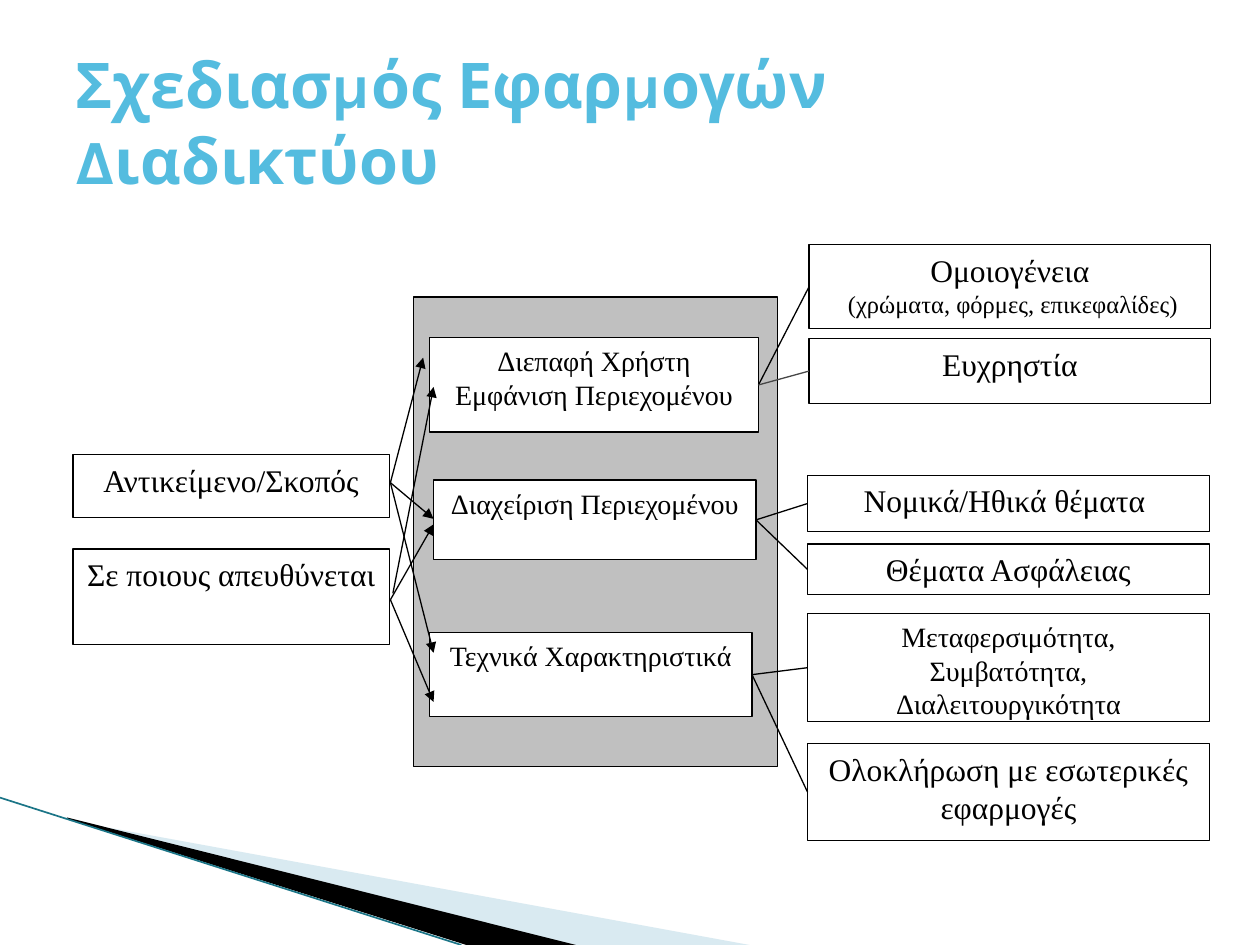
"""Builds a slide on designing web applications, with topics joined to their aspects."""
from typing import NamedTuple

from lxml import etree
from pptx import Presentation
from pptx import util as u
from pptx.dml.color import RGBColor
from pptx.enum import shapes, text
from pptx.oxml.ns import qn


class Theme(NamedTuple):
    font: str = "Times New Roman"
    head: str = "Karla"
    title: str = "54BCDF"
    ink: str = "000000"
    paper: str = "FFFFFF"
    panel: str = "C0C0C0"
    soft: str = "464646"
    wedge: str = "A0CBDC"
    edge: str = "1B7587"
    huge: int = 36
    big: int = 18
    mid: int = 16
    small: int = 14
    line: float = 0.75


class Run(NamedTuple):
    text: str
    size: int


class Box(NamedTuple):
    left: float
    top: float
    width: float
    height: float
    runs: tuple[Run, ...] = ()
    fill: str = "FFFFFF"

    @property
    def start(self) -> tuple[float, float]:
        return self.left, self.top + self.height / 2

    @property
    def end(self) -> tuple[float, float]:
        return self.left + self.width, self.top + self.height / 2


class Link(NamedTuple):
    start: tuple[float, float]
    end: tuple[float, float]
    color: str = "000000"
    arrow: bool = False


T = Theme()
LEFT, SIDE = 1.47, 6.38
RIGHT, WIDE = 16.28, 8.1

PANEL = Box(8.33, 5.99, 7.34, 9.47, fill=T.panel)
GOAL = Box(LEFT, 9.17, SIDE, 1.27, (Run("Αντικείμενο/Σκοπός", T.big),))
USERS = Box(LEFT, 11.07, SIDE, 1.93, (Run("Σε ποιους απευθύνεται", T.big),))
VIEW = Box(8.66, 6.81, 6.63, 1.9, (Run("Διεπαφή Χρήστη", T.mid), Run("Εμφάνιση Περιεχομένου", T.mid)))
DATA = Box(8.74, 9.68, 6.5, 1.6, (Run("Διαχείριση Περιεχομένου", T.mid),))
TECH = Box(8.66, 12.75, 6.5, 1.7, (Run("Τεχνικά Χαρακτηριστικά", T.mid),))
STYLE = Box(16.31, 4.93, WIDE, 1.7,
            (Run("Ομοιογένεια", T.big), Run(" (χρώματα, φόρμες, επικεφαλίδες)", T.small)))
EASE = Box(16.31, 6.83, WIDE, 1.3, (Run("Ευχρηστία", T.big),))
LEGAL = Box(RIGHT, 9.58, WIDE, 1.14, (Run("Νομικά/Ηθικά θέματα ", T.big),))
SAFE = Box(RIGHT, 10.97, WIDE, 1.02, (Run("Θέματα Ασφάλειας", T.big),))
PORT = Box(RIGHT, 12.37, WIDE, 2.18, (Run("Μεταφερσιμότητα, Συμβατότητα, Διαλειτουργικότητα", T.mid),))
JOIN = Box(RIGHT, 14.99, WIDE, 1.96, (Run("Ολοκλήρωση με εσωτερικές εφαρμογές", T.big),))

BOXES = (PANEL, GOAL, USERS, VIEW, DATA, TECH, STYLE, EASE, LEGAL, SAFE, PORT, JOIN)
ARROWS = {
    (7.87, 9.73): ((8.53, 7.21), (8.74, 10.46), (8.74, 13.16)),
    (7.87, 12.09): ((8.74, 10.57), (8.74, 14.15)),
    (7.92, 11.96): ((8.74, 7.8),),
}
TREE = ((VIEW, STYLE), (VIEW, EASE), (DATA, LEGAL), (DATA, SAFE), (TECH, PORT), (TECH, JOIN))


def tint(name: str) -> RGBColor:
    return RGBColor.from_string(name)


def add_run(para, run: Run, font: str, color: str, bold: bool = False) -> None:
    part = para.add_run()
    part.text = run.text
    part.font.name = font
    part.font.size = u.Pt(run.size)
    part.font.bold = bold
    part.font.color.rgb = tint(color)


def add_box(slide, box: Box) -> None:
    shape = slide.shapes.add_shape(shapes.MSO_SHAPE.RECTANGLE, *map(u.Cm, box[:4]))
    shape.shadow.inherit = False
    shape.fill.solid()
    shape.fill.fore_color.rgb = tint(box.fill)
    shape.line.color.rgb = tint(T.ink)
    shape.line.width = u.Pt(T.line)
    frame = shape.text_frame
    frame.word_wrap = True
    frame.vertical_anchor = text.MSO_ANCHOR.TOP
    for i, run in enumerate(box.runs):
        para = frame.add_paragraph() if i else frame.paragraphs[0]
        para.alignment = text.PP_ALIGN.CENTER
        add_run(para, run, T.font, T.ink)


def add_link(slide, link: Link, width: float = T.line) -> None:
    line = slide.shapes.add_connector(
        shapes.MSO_CONNECTOR.STRAIGHT, *map(u.Cm, link.start + link.end))
    line.line.color.rgb = tint(link.color)
    line.line.width = u.Pt(width)
    if link.arrow:
        etree.SubElement(line.line._get_or_add_ln(), qn("a:tailEnd"), type="triangle")
    etree.SubElement(line._element.spPr, qn("a:effectLst"))


def add_wedge(slide, points: tuple, color: str, alpha: int = 100) -> None:
    dots = [(u.Cm(x), u.Cm(y)) for x, y in points]
    form = slide.shapes.build_freeform(*dots[0])
    form.add_line_segments(dots[1:])
    shape = form.convert_to_shape()
    shape.shadow.inherit = False
    shape.line.fill.background()
    shape.fill.solid()
    shape.fill.fore_color.rgb = tint(color)
    if alpha < 100:
        node = shape._element.spPr.find(qn("a:solidFill"))[0]
        etree.SubElement(node, qn("a:alpha"), val=str(alpha * 1000))


def add_title(slide, words: str) -> None:
    frame = slide.shapes.add_textbox(*map(u.Cm, (1.27, 1.09, 22.86, 2.72))).text_frame
    frame.word_wrap = True
    frame.vertical_anchor = text.MSO_ANCHOR.MIDDLE
    add_run(frame.paragraphs[0], Run(words, T.huge), T.head, T.title, True)


def main() -> None:
    deck = Presentation()
    deck.slide_width, deck.slide_height = u.Cm(25.4), u.Cm(19.05)
    slide = deck.slides.add_slide(deck.slide_layouts[6])
    add_wedge(slide, ((1.4, 16.54), (15.11, 19.05), (11.58, 19.05), (1.4, 16.51)), T.wedge, 40)
    add_wedge(slide, ((1.35, 16.48), (11.61, 19.05), (9.4, 19.05), (1.37, 16.51)), T.ink)
    add_link(slide, Link((0, 16.08), (9.3, 19.05), T.edge), 0.95)
    add_title(slide, "Σχεδιασμός Εφαρμογών Διαδικτύου")
    for box in BOXES:
        add_box(slide, box)
    for start, ends in ARROWS.items():
        for end in ends:
            add_link(slide, Link(start, end, T.ink, True))
    for root, leaf in TREE:
        add_link(slide, Link(root.end, leaf.start, T.soft if leaf is EASE else T.ink))
    deck.save("out.pptx")


if __name__ == "__main__":
    main()
